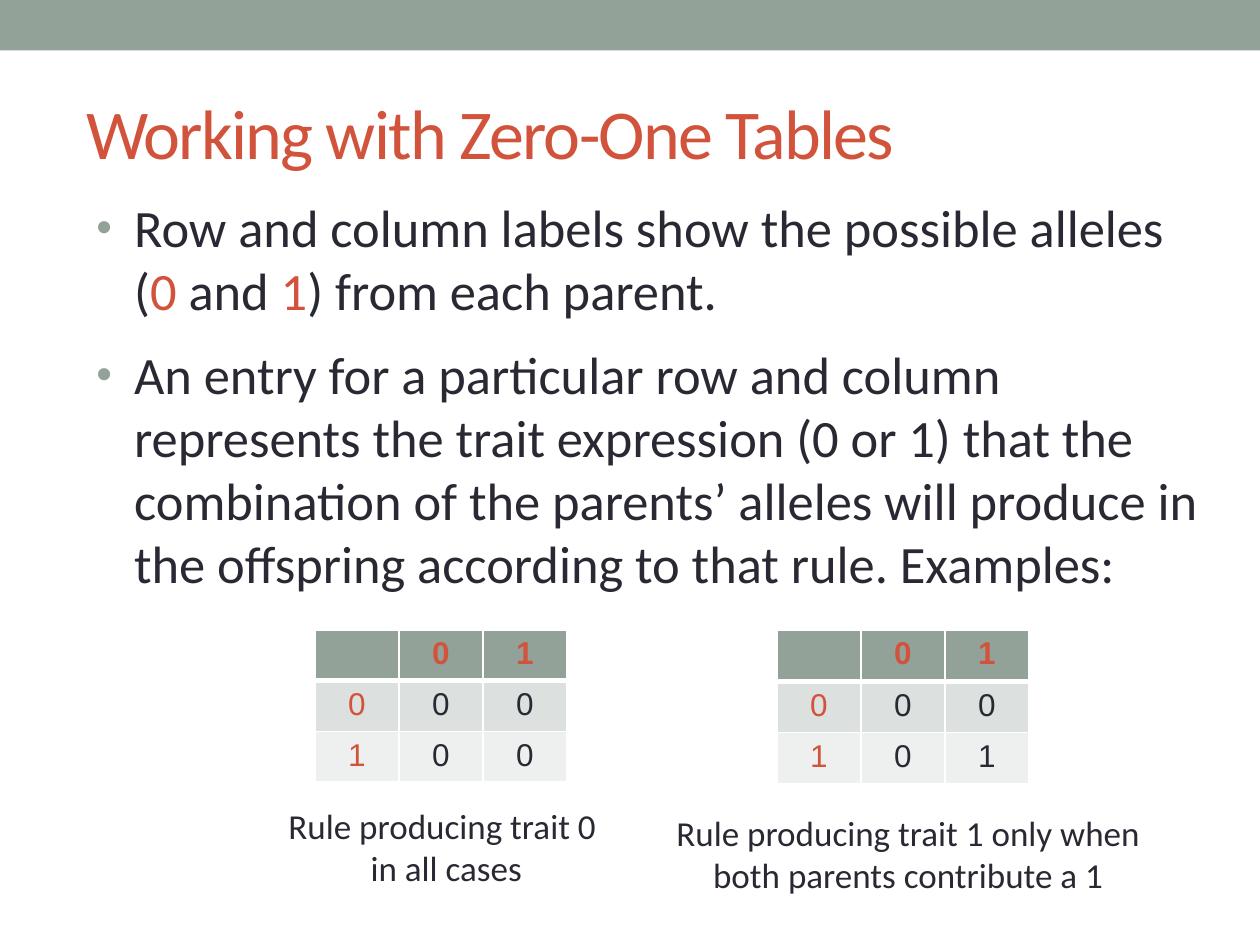
import pptx
import pptx.dml.color
import pptx.enum.shapes
import pptx.enum.text
import pptx.oxml
import pptx.oxml.ns
import pptx.util

Pt = pptx.util.Pt
RGBColor = pptx.dml.color.RGBColor
ANCHOR = pptx.enum.text.MSO_ANCHOR
ALIGN = pptx.enum.text.PP_ALIGN

SAGE = RGBColor(0x93, 0xA2, 0x99)
RUST = RGBColor(0xD2, 0x53, 0x3C)
INK = RGBColor(0x29, 0x29, 0x34)
ROW_FILLS = [SAGE, RGBColor(0xDC, 0xE0, 0xDE), RGBColor(0xEE, 0xF0, 0xEF)]

TITLE_FONT = {"name": "Calibri", "size": Pt(40), "bold": False}
BODY_FONT = {"name": "Calibri", "size": Pt(30)}
CAPTION_FONT = {"name": "Calibri", "size": Pt(20)}
CELL_FONT = {"name": "Arial", "size": Pt(18)}

BULLETS = [
    [("Row and column labels show the possible alleles (", INK), ("0", RUST),
     (" and ", INK), ("1", RUST), (") from each parent.", INK)],
    [("An entry for a particular row and column represents the trait expression "
      "(0 or 1) that the combination of the parents’ alleles will produce in the "
      "offspring according to that rule. Examples:", INK)],
]
ALLELES = ["0", "1"]


def set_attrs(obj, values):
    for name, value in values.items():
        setattr(obj, name, value)


def place(sp, left, top, width, height):
    set_attrs(sp, {"left": Pt(left), "top": Pt(top),
                   "width": Pt(width), "height": Pt(height)})


def add_run(p, text, fmt, color):
    r = p.add_run()
    r.text = text
    set_attrs(r.font, fmt)
    r.font.color.rgb = color
    return r


def add_xml(parent, tag, inner="", **attrs):
    """Append an a: element with the given attributes and inner markup."""
    listed = "".join(f' {name}="{value}"' for name, value in attrs.items())
    ns = pptx.oxml.ns.nsdecls("a")
    parent.append(pptx.oxml.parse_xml(f"<a:{tag} {ns}{listed}>{inner}</a:{tag}>"))


def add_band(s):
    sp = s.shapes.add_shape(pptx.enum.shapes.MSO_SHAPE.RECTANGLE,
                            Pt(0), Pt(0), Pt(720), Pt(28.8))
    sp.shadow.inherit = False
    sp.fill.solid()
    sp.fill.fore_color.rgb = SAGE
    sp.line.fill.background()


def add_title(s, text):
    sp = s.shapes.title
    place(sp, 42, 36, 642, 78)
    tf = sp.text_frame
    set_attrs(tf, {"vertical_anchor": ANCHOR.MIDDLE, "word_wrap": True,
                   "auto_size": pptx.enum.text.MSO_AUTO_SIZE.NONE})
    p = tf.paragraphs[0]
    p.alignment = ALIGN.LEFT
    r = add_run(p, text, TITLE_FONT, RUST)
    r.font._element.set("spc", "-100")


def add_text_box(s, *box):
    tf = s.shapes.add_textbox(*map(Pt, box)).text_frame
    tf.word_wrap = True
    return tf


def add_bullets(s, bullets):
    tf = add_text_box(s, 48, 108, 648, 408)
    for i, runs in enumerate(bullets):
        p = tf.add_paragraph() if i else tf.paragraphs[0]
        if i:
            p.space_before = Pt(12)
        pPr = p._p.get_or_add_pPr()
        pPr.set("marL", str(Pt(21.6)))
        pPr.set("indent", str(-Pt(21.6)))
        add_xml(pPr, "buClr", f'<a:srgbClr val="{SAGE}"/>')
        add_xml(pPr, "buSzPct", val=85000)
        add_xml(pPr, "buFont", typeface="Arial")
        add_xml(pPr, "buChar", char="•")
        for text, color in runs:
            add_run(p, text, BODY_FONT, color)


def add_borders(cell, row):
    """White cell edges, thicker on both sides of the header's lower edge."""
    widths = {"lnL": 1, "lnR": 1, "lnT": 3 if row == 1 else 1,
              "lnB": 3 if row == 0 else 1}
    for tag, width in widths.items():
        add_xml(cell._tc.get_or_add_tcPr(), tag,
                '<a:solidFill><a:srgbClr val="FFFFFF"/></a:solidFill>', w=Pt(width))


def add_rule_table(s, left, row_height, traits):
    """Zero-one table: allele labels on both axes, trait values inside."""
    rows = [["", *ALLELES]] + [[a, *line] for a, line in zip(ALLELES, traits)]
    table = s.shapes.add_table(3, 3, Pt(left), Pt(360), Pt(144),
                               Pt(3 * row_height)).table
    for col in table.columns:
        col.width = Pt(48)
    for i, values in enumerate(rows):
        table.rows[i].height = Pt(row_height)
        for j, value in enumerate(values):
            cell = table.cell(i, j)
            add_borders(cell, i)
            cell.fill.solid()
            cell.fill.fore_color.rgb = ROW_FILLS[i]
            if value:
                p = cell.text_frame.paragraphs[0]
                p.alignment = ALIGN.CENTER
                add_run(p, value, {**CELL_FONT, "bold": i == 0},
                        RUST if i == 0 or j == 0 else INK)


def add_caption(s, left, top, width, lines):
    p = add_text_box(s, left, top, width, 55.7).paragraphs[0]
    p.alignment = ALIGN.CENTER
    for i, line in enumerate(lines):
        if i:
            p.add_line_break()
        add_run(p, line, CAPTION_FONT, INK)


def main():
    prs = pptx.Presentation()
    set_attrs(prs, {"slide_width": Pt(720), "slide_height": Pt(540)})
    s = prs.slides.add_slide(prs.slide_layouts[5])
    add_band(s)
    add_title(s, "Working with Zero-One Tables")
    add_bullets(s, BULLETS)
    add_rule_table(s, 180, 29, ["00", "00"])
    add_rule_table(s, 444, 29.3, ["00", "01"])
    add_caption(s, 138, 456, 234, ["Rule producing trait 0 ", "in all cases"])
    add_caption(s, 378, 460, 282,
                ["Rule producing trait 1 only when both parents contribute a 1"])
    prs.save("out.pptx")


if __name__ == "__main__":
    main()
